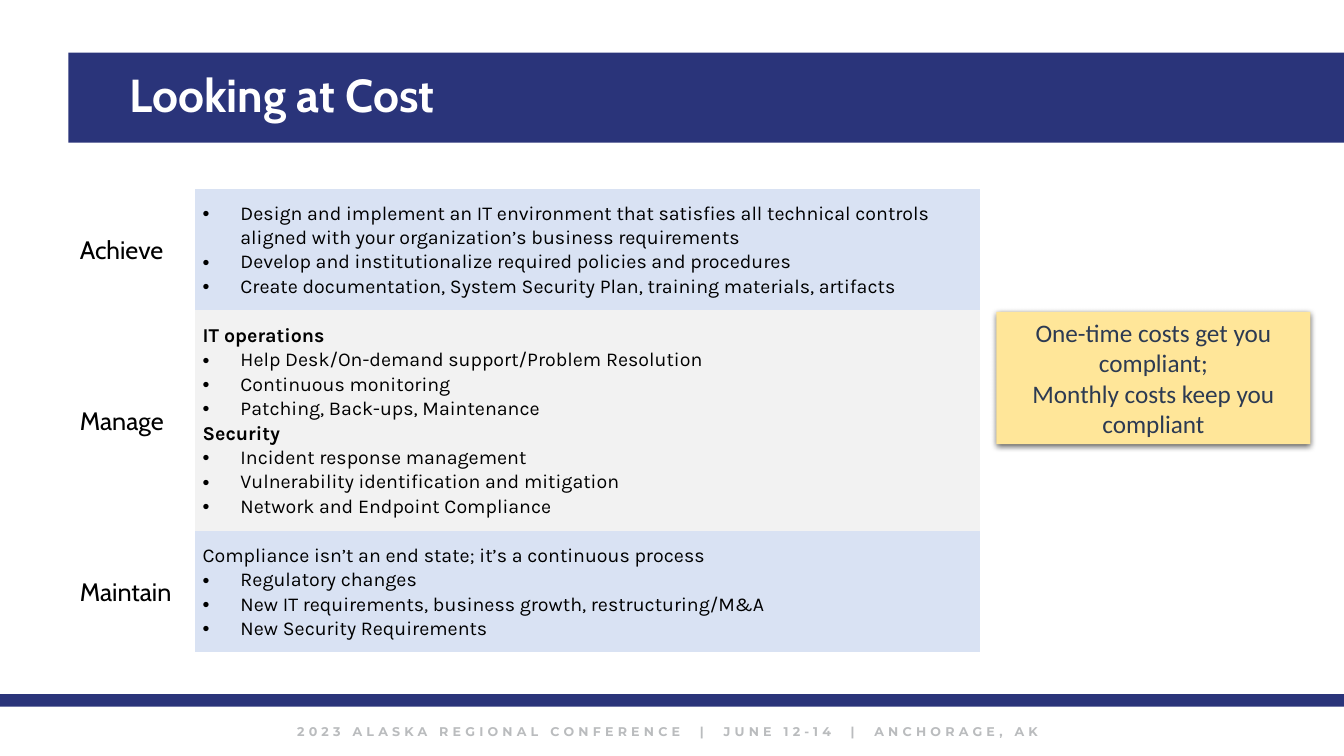
from lxml.etree import SubElement
from pptx import Presentation
from pptx.dml.color import RGBColor
from pptx.enum.shapes import MSO_SHAPE
from pptx.enum.text import MSO_ANCHOR, PP_ALIGN
from pptx.oxml.ns import qn
from pptx.util import Pt

PX = 9525  # EMU in one px, 96 px to the inch
NAVY, BLUE, GRAY = "2A347A", "D9E2F3", "F2F2F2"
NO_GRID = "{2D5ABB26-0587-4C30-8999-92F81FD0307C}"

# Each line is (style, text)
ROWS = [
    ("Achieve", 115, BLUE, [
        ("bullet", "Design and implement an IT environment that satisfies all technical "
                   "controls aligned with your organization’s business requirements"),
        ("bullet", "Develop and institutionalize required policies and procedures"),
        ("bullet", "Create documentation, System Security Plan, training materials, artifacts"),
    ]),
    ("Manage", 211, GRAY, [
        ("head", "IT operations"),
        ("bullet", "Help Desk/On-demand support/Problem Resolution"),
        ("bullet", "Continuous monitoring"),
        ("bullet", "Patching, Back-ups, Maintenance"),
        ("head", "Security"),
        ("bullet", "Incident response management"),
        ("bullet", "Vulnerability identification and mitigation"),
        ("bullet", "Network and Endpoint Compliance"),
    ]),
    ("Maintain", 115, BLUE, [
        ("plain", "Compliance isn’t an end state; it’s a continuous process"),
        ("bullet", "Regulatory changes"),
        ("bullet", "New IT requirements, business growth, restructuring/M&A"),
        ("bullet", "New Security Requirements"),
    ]),
]


def color(code):
    return RGBColor.from_string(code)


class Deck:
    def __init__(self, width, height):
        self.prs = Presentation()
        self.prs.slide_width, self.prs.slide_height = width * PX, height * PX
        self.slide = self.prs.slides.add_slide(self.prs.slide_layouts[6])

    def style(self, font, name, size, ink, bold=False):
        font.name, font.size, font.bold = name, Pt(size), bold
        font.color.rgb = color(ink)

    def rect(self, x, y, w, h, fill):
        box = self.slide.shapes.add_shape(MSO_SHAPE.RECTANGLE, x * PX, y * PX, w * PX, h * PX)
        box.shadow.inherit = False
        box.fill.solid()
        box.fill.fore_color.rgb = color(fill)
        box.line.fill.background()
        return box

    def shade(self, box):
        glow = SubElement(box._element.spPr.find(qn("a:effectLst")), qn("a:outerShdw"),
                          blurRad=str(Pt(4.5)), dist=str(Pt(1.5)), dir="5400000",
                          algn="t", rotWithShape="0")
        tint = SubElement(glow, qn("a:srgbClr"), val="000000")
        SubElement(tint, qn("a:alpha"), val="63000")

    def label(self, frame, text, name, size, ink, bold=False, align=PP_ALIGN.LEFT, lead=1.0):
        frame.word_wrap = True
        frame.vertical_anchor = MSO_ANCHOR.MIDDLE
        frame.margin_top = frame.margin_bottom = 0
        frame.text = text
        for par in frame.paragraphs:
            par.alignment, par.line_spacing = align, lead
            for run in par.runs:
                self.style(run.font, name, size, ink, bold)

    def text(self, x, y, w, h, *args, **look):
        box = self.slide.shapes.add_textbox(x * PX, y * PX, w * PX, h * PX)
        self.label(box.text_frame, *args, **look)
        return box.text_frame

    def bullet(self, par):
        props = par._p.get_or_add_pPr()
        props.set("marL", str(36 * PX))
        props.set("indent", str(-36 * PX))
        SubElement(props, qn("a:buFont"), typeface="Arial")
        SubElement(props, qn("a:buChar"), char="•")

    def cell(self, cell, lines, name, size, fill=None):
        cell.margin_left = cell.margin_right = 7 * PX
        cell.margin_top = cell.margin_bottom = 0
        cell.vertical_anchor = MSO_ANCHOR.MIDDLE
        if fill:
            cell.fill.solid()
            cell.fill.fore_color.rgb = color(fill)
        else:
            cell.fill.background()
        cell.text_frame.text = "\n".join(text for _, text in lines)
        for par, (kind, _) in zip(cell.text_frame.paragraphs, lines):
            par.line_spacing = 1.07
            if kind == "bullet":
                self.bullet(par)
            for run in par.runs:
                self.style(run.font, name, size, "000000", kind == "head")

    def table(self, x, y, cols, rows):
        high = sum(row[1] for row in rows)
        table = self.slide.shapes.add_table(len(rows), len(cols), x * PX, y * PX,
                                            sum(cols) * PX, high * PX).table
        table.first_row = table.horz_banding = False
        table._tbl.tblPr.find(qn("a:tableStyleId")).text = NO_GRID
        for col, width in zip(table.columns, cols):
            col.width = width * PX
        for i, (stage, height, fill, lines) in enumerate(rows):
            table.rows[i].height = height * PX
            self.cell(table.cell(i, 0), [("plain", stage)], "Cabin", 18)
            self.cell(table.cell(i, 1), lines, "Karla", 14, fill)


def main():
    deck = Deck(1280, 720)

    # Title band
    deck.rect(65, 50, 1215, 86, NAVY)
    deck.text(114, 68, 1051, 49, "Looking at Cost", "Cabin", 33, "FFFFFF", bold=True, lead=0.9)

    # Footer
    deck.rect(0, 661, 1280, 12, NAVY)
    foot = deck.text(43, 685, 1185, 24,
                     "2023 ALASKA REGIONAL CONFERENCE  |  JUNE 12-14  |  ANCHORAGE, AK",
                     "Montserrat", 9, "BABCBE", bold=True, align=PP_ALIGN.CENTER)
    foot.paragraphs[0].runs[0]._r.get_or_add_rPr().set("spc", "300")

    # Cost stages
    deck.table(69, 180, [117, 747], ROWS)

    # Takeaway note
    note = deck.rect(949, 297, 299, 126, "FFE699")
    deck.shade(note)
    deck.label(note.text_frame,
               "One-time costs get you compliant;\nMonthly costs keep you compliant",
               "Calibri", 18, "2C3A52", align=PP_ALIGN.CENTER)

    deck.prs.save("out.pptx")


if __name__ == "__main__":
    main()
